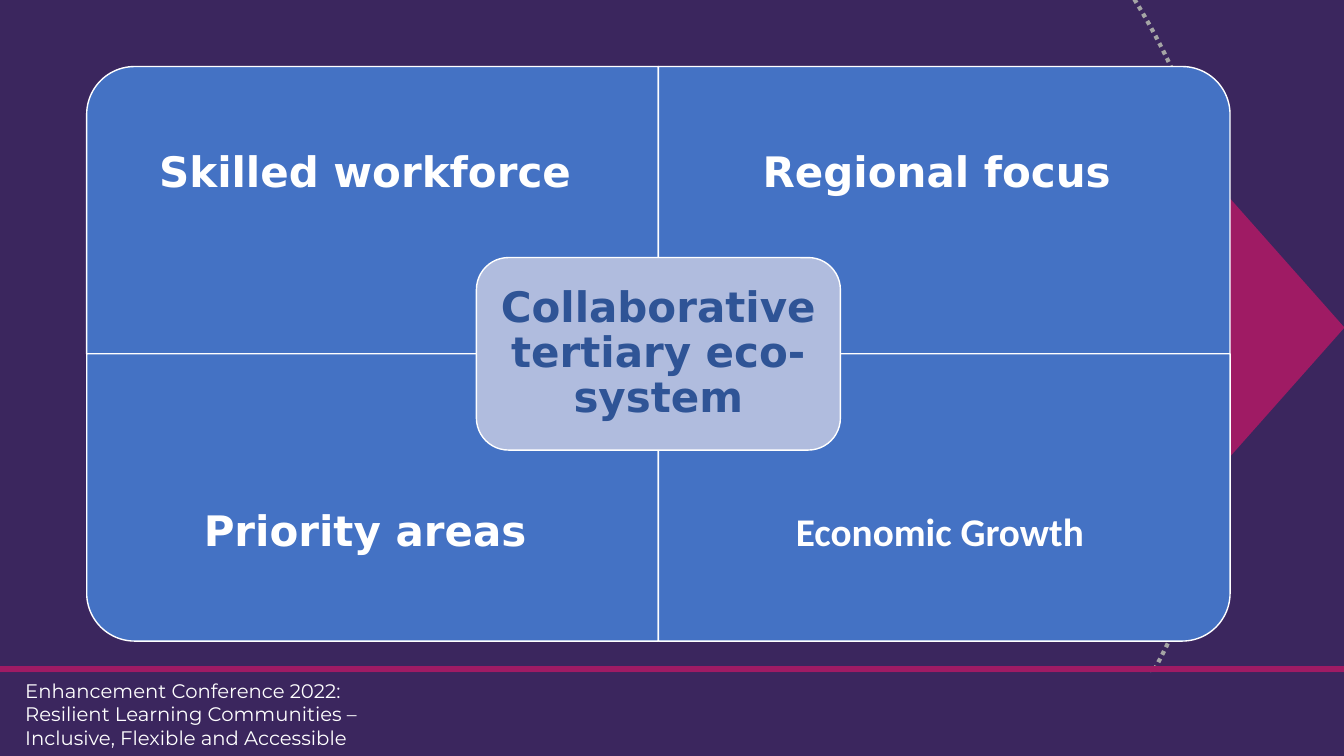
from pptx import Presentation
from pptx.dml.color import RGBColor
from pptx.enum.dml import MSO_LINE
from pptx.enum.shapes import MSO_SHAPE
from pptx.enum.text import MSO_ANCHOR, PP_ALIGN
from pptx.util import Inches, Pt

RECTANGLE, OVAL = MSO_SHAPE.RECTANGLE, MSO_SHAPE.OVAL
TRIANGLE, ROUNDED = MSO_SHAPE.ISOSCELES_TRIANGLE, MSO_SHAPE.ROUNDED_RECTANGLE
ONE_ROUND = MSO_SHAPE.ROUND_1_RECTANGLE
DOTTED = MSO_LINE.ROUND_DOT
MIDDLE = MSO_ANCHOR.MIDDLE
LEFT, CENTER = PP_ALIGN.LEFT, PP_ALIGN.CENTER

THEME = {
    "purple": "3B265E", "crimson": "9F1B64", "grey": "A5A5A5",
    "blue": "4472C4", "pale": "B0BCDE", "navy": "2F5496", "white": "FFFFFF",
    "heading": ("DejaVu Sans", 30, True),
    "growth": ("Calibri", 28, True),
    "footer": ("Montserrat", 14, False),
}
WIDTH, HEIGHT = 13.33, 7.5

deck = Presentation()
deck.slide_width, deck.slide_height = Inches(WIDTH), Inches(HEIGHT)
page = deck.slides.add_slide(deck.slide_layouts[6])


def add_block(kind, center_x, center_y, width, height, fill=None, line=None, weight=1, turn=0):
    """Place a shape by its centre, so that turning it keeps its place."""
    block = page.shapes.add_shape(kind, Inches(center_x - width / 2), Inches(center_y - height / 2),
                                  Inches(width), Inches(height))
    block.shadow.inherit = False
    block.rotation = turn
    if fill:
        block.fill.solid()
        block.fill.fore_color.rgb = RGBColor.from_string(THEME[fill])
    else:
        block.fill.background()
    if line:
        block.line.color.rgb = RGBColor.from_string(THEME[line])
        block.line.width = Pt(weight)
    else:
        block.line.fill.background()
    return block


def write(box, lines, style, color, inset, align=CENTER, spacing=0.9):
    frame = box.text_frame
    frame.word_wrap = True
    frame.vertical_anchor = MIDDLE
    frame.margin_left = frame.margin_right = Inches(inset)
    frame.margin_top = frame.margin_bottom = Inches(min(inset, 0.22))
    frame.text = "\n".join(lines)
    name, size, bold = THEME[style]
    for para in frame.paragraphs:
        para.alignment = align
        para.line_spacing = spacing
        for span in para.runs:
            span.font.name, span.font.size, span.font.bold = name, Pt(size), bold
            span.font.color.rgb = RGBColor.from_string(THEME[color])


# Backdrop: purple page, dotted ring, crimson arrowhead
page.background.fill.solid()
page.background.fill.fore_color.rgb = RGBColor.from_string(THEME["purple"])
ring = add_block(OVAL, 5.6, 3.49, 13.29, 13.29, line="grey", weight=3)
ring.line.dash_style = DOTTED
add_block(TRIANGLE, 12.24, 3.25, 4.94, 2.19, "crimson", turn=90)

# Footer: crimson rule above a purple band
rule, band = 0.06, 0.83
add_block(RECTANGLE, WIDTH / 2, HEIGHT - band - rule / 2, WIDTH, rule, "crimson")
footer = add_block(RECTANGLE, WIDTH / 2, HEIGHT - band / 2, WIDTH, band, "purple")
write(footer, ["Enhancement Conference 2022:", "Resilient Learning Communities –",
               "Inclusive, Flexible and Accessible"], "footer", "white", 0.25, LEFT, 1)
footer.text_frame.margin_top = footer.text_frame.margin_bottom = Inches(0.05)

# Matrix: four quadrants, each turned so its round corner points outwards
left, top, column, row = 0.86, 0.66, 5.67, 2.85
label_height = row * 0.75
quadrants = [
    (0, 0, 270, "Skilled workforce ", "heading"),
    (1, 0, 0, "Regional focus ", "heading"),
    (0, 1, 180, "Priority areas ", "heading"),
    (1, 1, 90, "Economic Growth ", "growth"),
]
for across, down, turn, label, style in quadrants:
    size = (row, column) if turn % 180 else (column, row)
    add_block(ONE_ROUND, left + (across + 0.5) * column, top + (down + 0.5) * row,
              *size, "blue", "white", turn=turn)
    label_top = top + down * (2 * row - label_height)
    box = page.shapes.add_textbox(Inches(left + across * column), Inches(label_top),
                                  Inches(column), Inches(label_height))
    write(box, [label], style, "white", 0.22)

# Centre of the matrix
hub = add_block(ROUNDED, left + column, top + row, 3.61, 1.91, "pale", "white")
write(hub, ["Collaborative tertiary eco-system"], "heading", "navy", 0.12)

deck.save("out.pptx")
